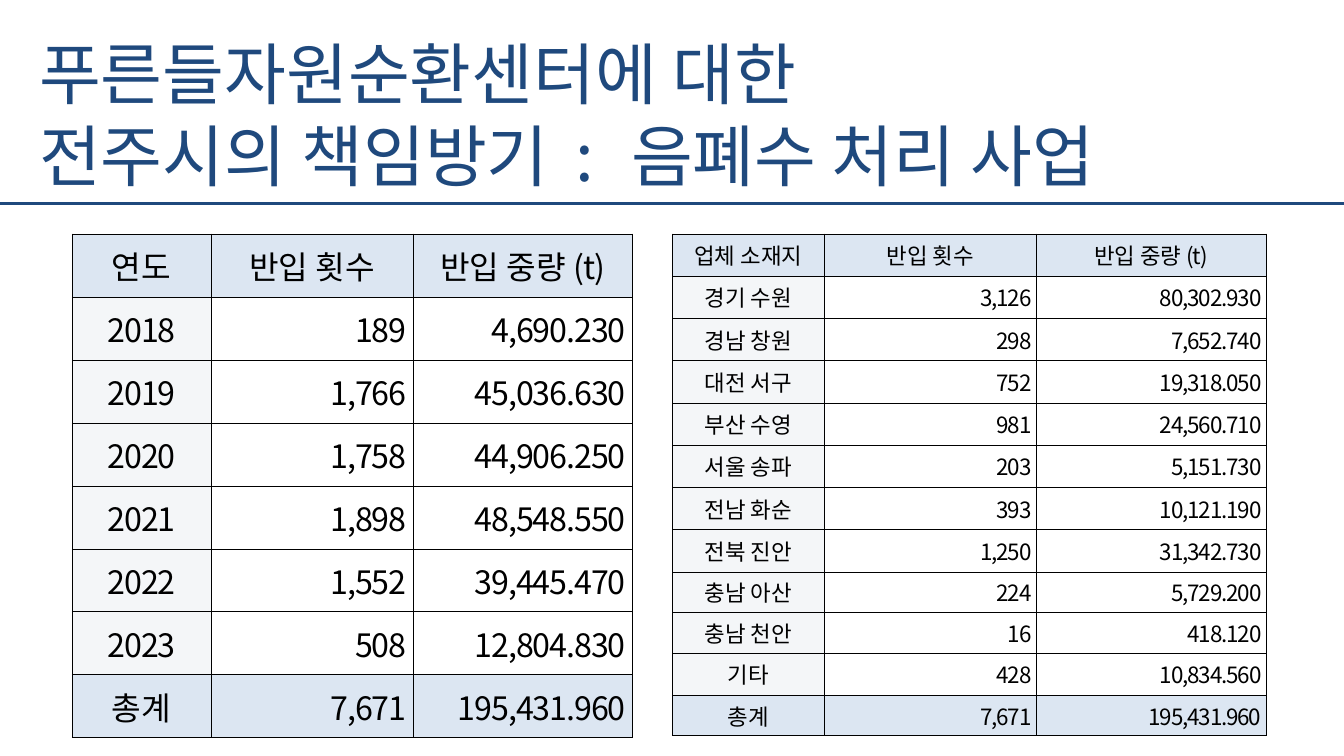
from pptx import Presentation
from pptx.dml.color import RGBColor
from pptx.enum.shapes import MSO_CONNECTOR
from pptx.enum.text import MSO_ANCHOR, PP_ALIGN
from pptx.oxml.ns import qn
from pptx.util import Pt
from lxml.etree import SubElement

NAVY = RGBColor(0x1F, 0x49, 0x7D)
BLACK = RGBColor(0, 0, 0)
WHITE = RGBColor(0xFF, 0xFF, 0xFF)
PALE_BLUE = RGBColor(0xDC, 0xE6, 0xF2)
PALE_GREY = RGBColor(0xF4, 0xF6, 0xF8)
FONT = "Noto Sans CJK KR"


def add_run(paragraph, text, size, color, spacing=0):
    run = paragraph.add_run()
    run.text = text
    run.font.size = Pt(size)
    run.font.name = FONT
    run.font.color.rgb = color
    properties = run.font._element
    SubElement(properties, qn("a:ea")).set("typeface", FONT)
    if spacing:
        properties.set("spc", str(round(spacing * 100)))


def add_borders(cell):
    properties = cell._tc.get_or_add_tcPr()
    for side in ("a:lnL", "a:lnR", "a:lnT", "a:lnB"):
        border = SubElement(properties, qn(side), w=str(Pt(0.28)))
        fill = SubElement(border, qn("a:solidFill"))
        SubElement(fill, qn("a:srgbClr"), val=str(BLACK))


presentation = Presentation()
presentation.slide_width = Pt(960)
presentation.slide_height = Pt(540)
slide = presentation.slides.add_slide(presentation.slide_layouts[6])

# Rule under the title
title_rule = slide.shapes.add_connector(
    MSO_CONNECTOR.STRAIGHT, Pt(0), Pt(145.4), Pt(960), Pt(145.4))
title_rule.line.color.rgb = NAVY
title_rule.line.width = Pt(2.5)
SubElement(title_rule._element.spPr, qn("a:effectLst"))

# Title, with wider spacing around the colon
title = slide.shapes.add_textbox(Pt(20.9), Pt(15.1), Pt(795.6), Pt(123.8)).text_frame
title.word_wrap = True
title.margin_bottom = Pt(0)
title.margin_top = Pt(7.2)
title_lines = [
    [("푸른들자원순환센터에 대한", 0)],
    [("전주시의 책임방기", 0), (" : ", 8), ("음폐수 처리 사업", 0)],
]
for index, line_runs in enumerate(title_lines):
    title_line = title.add_paragraph() if index else title.paragraphs[0]
    title_line.line_spacing = Pt(58.3)
    for text, spacing in line_runs:
        add_run(title_line, text, 48, NAVY, spacing)

# Deliveries by year and by location of the company
by_year = [
    ("연도", "반입 횟수", "반입 중량 (t)"),
    ("2018", "189", "4,690.230"),
    ("2019", "1,766", "45,036.630"),
    ("2020", "1,758", "44,906.250"),
    ("2021", "1,898", "48,548.550"),
    ("2022", "1,552", "39,445.470"),
    ("2023", "508", "12,804.830"),
    ("총계", "7,671", "195,431.960"),
]
by_location = [
    ("업체 소재지", "반입 횟수", "반입 중량 (t)"),
    ("경기 수원", "3,126", "80,302.930"),
    ("경남 창원", "298", "7,652.740"),
    ("대전 서구", "752", "19,318.050"),
    ("부산 수영", "981", "24,560.710"),
    ("서울 송파", "203", "5,151.730"),
    ("전남 화순", "393", "10,121.190"),
    ("전북 진안", "1,250", "31,342.730"),
    ("충남 아산", "224", "5,729.200"),
    ("충남 천안", "16", "418.120"),
    ("기타", "428", "10,834.560"),
    ("총계", "7,671", "195,431.960"),
]
location_heights = [30.2] * 8 + [28.9, 28.9, 30.2, 28.9]

# Rows, left edge, column widths, row heights, text size, side and top margins
tables = [
    (by_year, 51.4, (99.6, 144, 156.7), [45] * 8, 23, 4.6, 2.9),
    (by_location, 480.2, (108.7, 151.2, 164.2), location_heights, 16, 3.2, 2),
]
for rows, left, widths, heights, size, side_margin, top_margin in tables:
    frame = slide.shapes.add_table(
        len(rows), len(widths), Pt(left), Pt(167), Pt(sum(widths)), Pt(sum(heights)))
    table = frame.table
    table.horz_banding = False
    for column, width in zip(table.columns, widths):
        column.width = Pt(width)
    for row, height in zip(table.rows, heights):
        row.height = Pt(height)

    for r, values in enumerate(rows):
        for c, value in enumerate(values):
            cell = table.cell(r, c)
            cell.margin_left = cell.margin_right = Pt(side_margin)
            cell.margin_top = cell.margin_bottom = Pt(top_margin)
            cell.vertical_anchor = MSO_ANCHOR.MIDDLE
            add_borders(cell)
            cell.fill.solid()
            if r in (0, len(rows) - 1):
                cell.fill.fore_color.rgb = PALE_BLUE
            else:
                cell.fill.fore_color.rgb = WHITE if c else PALE_GREY

            entry = cell.text_frame.paragraphs[0]
            entry.alignment = PP_ALIGN.RIGHT if r and c else PP_ALIGN.CENTER
            # Figures and the unit are set tighter than Korean words
            words, unit, _ = value.partition("(t)")
            add_run(entry, words, size, BLACK, -0.8 if words[0].isdigit() else 0)
            if unit:
                add_run(entry, unit, size, BLACK, -0.8)

presentation.save("out.pptx")
